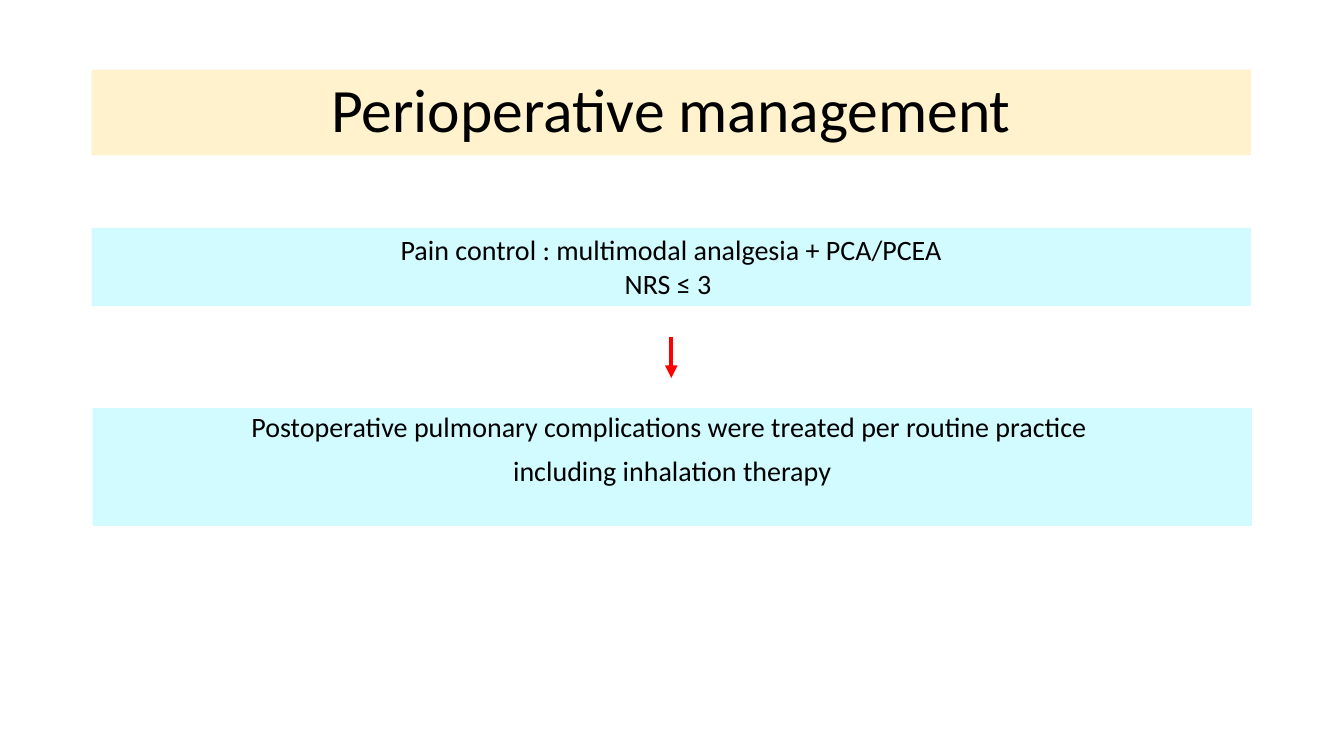
from lxml.etree import SubElement
from pptx import Presentation
from pptx.dml.color import RGBColor
from pptx.enum.shapes import MSO_CONNECTOR as CONNECTOR, MSO_SHAPE as SHAPE
from pptx.enum.text import MSO_ANCHOR as ANCHOR, PP_ALIGN as ALIGN
from pptx.oxml.ns import qn
from pptx.util import Pt


def color(hex_string):
    return RGBColor.from_string(hex_string)


presentation = Presentation()
presentation.slide_width = Pt(960)
presentation.slide_height = Pt(540)
slide = presentation.slides.add_slide(presentation.slide_layouts[6])

bands = [
    (65.5, 49.7, 61.2, "FFF2CC", 44, ANCHOR.MIDDLE, 0.9, 0,
     ["Perioperative management"]),
    (65.5, 162.8, 55.7, "D1FBFF", 20, ANCHOR.TOP, 1.0, 0,
     ["Pain control : multimodal analgesia + PCA/PCEA", "NRS ≤ 3 "]),
    (66.2, 291.5, 84.2, "D1FBFF", 20, ANCHOR.TOP, 0.9, 10,
     ["Postoperative pulmonary complications were treated per routine practice ",
      "including inhalation therapy"]),
]

for left, top, height, fill, size, anchor, line_spacing, space_before, lines in bands:
    shape = slide.shapes.add_shape(SHAPE.RECTANGLE, Pt(left), Pt(top), Pt(828), Pt(height))
    shape.shadow.inherit = False
    shape.fill.solid()
    shape.fill.fore_color.rgb = color(fill)
    shape.line.fill.background()
    frame = shape.text_frame
    frame.word_wrap = True
    frame.vertical_anchor = anchor
    for index, line in enumerate(lines):
        paragraph = frame.add_paragraph() if index else frame.paragraphs[0]
        paragraph.alignment = ALIGN.CENTER
        paragraph.line_spacing = line_spacing
        paragraph.space_before = Pt(space_before)
        run = paragraph.add_run()
        run.text = line
        run.font.name = "Calibri"
        run.font.size = Pt(size)
        run.font.color.rgb = color("000000")

arrow = slide.shapes.add_connector(CONNECTOR.STRAIGHT, Pt(479.5), Pt(240.5), Pt(479.5), Pt(270))
arrow.line.color.rgb = color("FF0000")
arrow.line.width = Pt(3)
SubElement(arrow.line._get_or_add_ln(), qn("a:tailEnd"), type="triangle")
SubElement(arrow._element.spPr, qn("a:effectLst"))

presentation.save("out.pptx")
